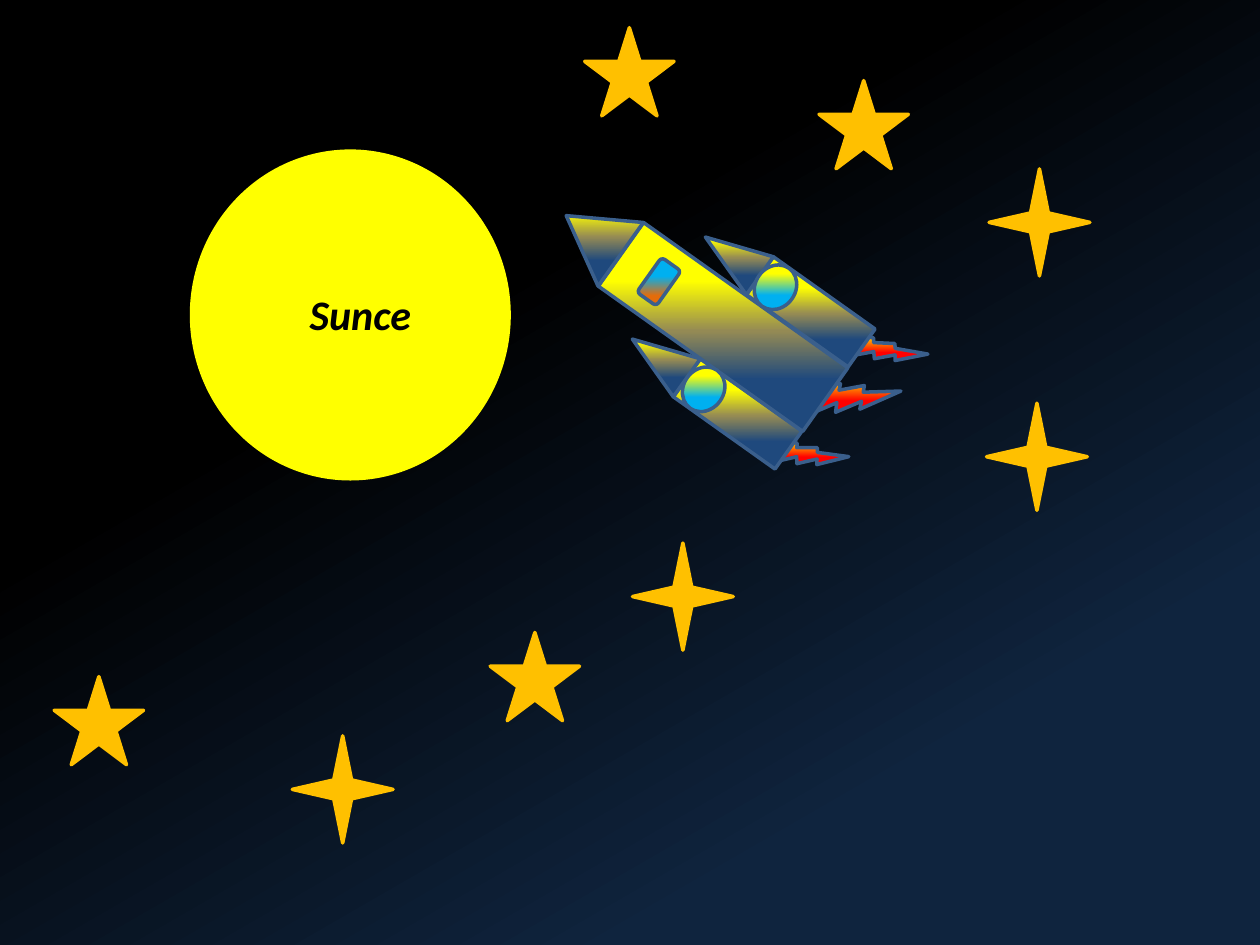
from lxml import etree
from pptx import Presentation
from pptx.dml.color import RGBColor
from pptx.enum.shapes import MSO_SHAPE
from pptx.enum.text import MSO_AUTO_SIZE, PP_ALIGN
from pptx.oxml.ns import qn
from pptx.util import Inches, Pt

OVAL = MSO_SHAPE.OVAL
BOLT = MSO_SHAPE.LIGHTNING_BOLT
RECT = MSO_SHAPE.RECTANGLE
CONE = MSO_SHAPE.ISOSCELES_TRIANGLE
PANE = MSO_SHAPE.ROUNDED_RECTANGLE
STAR5 = MSO_SHAPE.STAR_5_POINT
STAR4 = MSO_SHAPE.STAR_4_POINT
CENTER = PP_ALIGN.CENTER
GROW = MSO_AUTO_SIZE.SHAPE_TO_FIT_TEXT

SUN, GOLD, EDGE = "FFFF00", "FFC000", "3A5F8C"
TILT = 305.4
SKY = [(34, "000000"), (78, "0F243E")]
FLAME = [(28, SUN), (52, "FF0000")]
HULL = [(28, SUN), (52, "948A54"), (75, "1F497D")]
GLASS = [(39, "00B0F0"), (79, "E46C0A")]
PORT = [(28, SUN), (63, "00B0F0")]

ROCKET = [
    (BOLT, FLAME, [(6.84, 2.49, 0.36, 0.59), (6.46, 2.87, 0.57, 0.59),
                   (6.22, 3.34, 0.37, 0.55)]),
    (RECT, HULL, [(5.67, 2.79, 0.37, 0.99), (5.43, 1.6, 0.62, 1.99),
                  (6.25, 1.98, 0.37, 0.99)]),
    (CONE, HULL, [(4.4, 1.6, 0.62, 0.53), (5.05, 2.58, 0.37, 0.53),
                  (5.63, 1.77, 0.37, 0.53)]),
    (PANE, GLASS, [(5.06, 2.14, 0.34, 0.19)]),
    (OVAL, PORT, [(5.97, 2.12, 0.37, 0.32), (5.4, 2.93, 0.37, 0.32)]),
]
STARS = [
    (STAR5, (0.71, 0.7), [(6.5, 0.64), (3.89, 5.02), (0.43, 5.37), (4.64, 0.22)]),
    (STAR4, (0.8, 0.85), [(2.32, 5.84), (7.85, 1.34), (5.02, 4.31), (7.83, 3.2)]),
]


def color(code):
    return RGBColor.from_string(code)


def blend(fill, root, stops, angle):
    fill.gradient()
    fill.gradient_angle = 360 - angle
    grad = next(root.iter(qn("a:gradFill")))
    grad.set("rotWithShape", "0")
    ramp = grad.find(qn("a:gsLst"))
    for old in list(ramp):
        ramp.remove(old)
    for spot, code in stops:
        stop = etree.SubElement(ramp, qn("a:gs"), pos=str(spot * 1000))
        etree.SubElement(stop, qn("a:srgbClr"), val=code)


def add_shape(shapes, kind, box, edge):
    shape = shapes.add_shape(kind, *map(Inches, box))
    shape.shadow.inherit = False
    shape.line.color.rgb = color(edge)
    shape.line.width = Pt(2)
    return shape


def add_solid(shapes, kind, box, code):
    shape = add_shape(shapes, kind, box, code)
    shape.fill.solid()
    shape.fill.fore_color.rgb = color(code)


def add_part(shapes, kind, box, stops):
    shape = add_shape(shapes, kind, box, EDGE)
    shape.rotation = TILT
    blend(shape.fill, shape._element, stops, 90)


def add_rocket(shapes):
    group = shapes.add_group_shape()
    for kind, stops, boxes in ROCKET:
        for box in boxes:
            add_part(group.shapes, kind, box, stops)


def add_stars(shapes):
    group = shapes.add_group_shape()
    for kind, size, spots in STARS:
        for spot in spots:
            add_solid(group.shapes, kind, spot + size, GOLD)


def add_label(shapes, box, text):
    label = shapes.add_textbox(*map(Inches, box))
    frame = label.text_frame
    frame.word_wrap = True
    frame.auto_size = GROW
    para = frame.paragraphs[0]
    para.alignment = CENTER
    run = para.add_run()
    run.text = text
    font = run.font
    font.name = "Calibri"
    font.size = Pt(24)
    font.bold = font.italic = True
    font.color.rgb = color("000000")


def main():
    deck = Presentation()
    deck.slide_width = Inches(10)
    deck.slide_height = Inches(7.5)
    slide = deck.slides.add_slide(deck.slide_layouts[6])
    blend(slide.background.fill, slide._element, SKY, 60)
    shapes = slide.shapes
    add_solid(shapes, OVAL, (1.52, 1.2, 2.52, 2.6), SUN)
    add_rocket(shapes)
    add_label(shapes, (1.93, 2.24, 1.86, 0.5), "Sunce")
    add_stars(shapes)
    deck.save("out.pptx")


if __name__ == "__main__":
    main()
